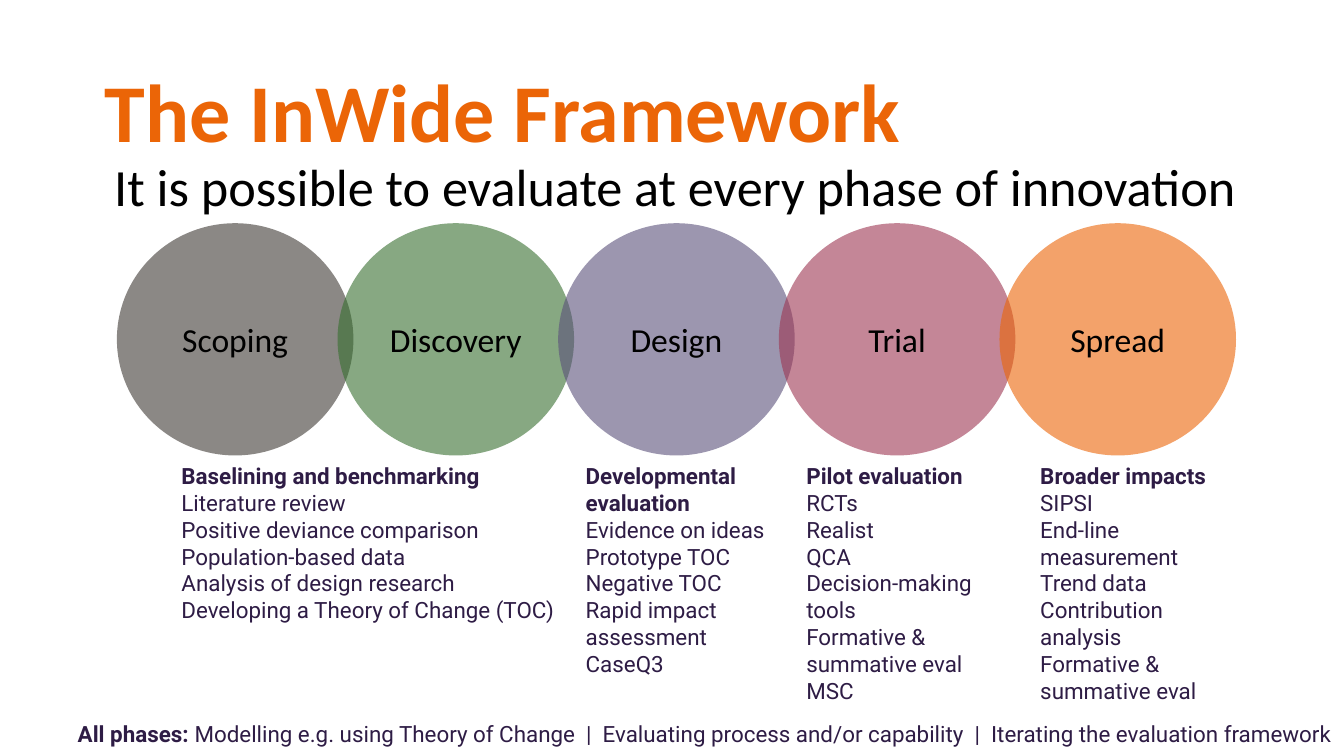
import pptx
import pptx.util
import pptx.dml.color
import pptx.enum.shapes
import pptx.enum.text
import pptx.oxml
import pptx.oxml.ns

Cm = pptx.util.Cm
ALIGN = pptx.enum.text.PP_ALIGN
ANCHOR = pptx.enum.text.MSO_ANCHOR

# Content
TITLE = "The InWide Framework"
SUBTITLE = "It is possible to evaluate at every phase of innovation"
PHASES = [
    ("Scoping", "3E3934"),
    ("Discovery", "376F2F"),
    ("Design", "5B517B"),
    ("Trial", "9D3652"),
    ("Spread", "EB6507"),
]
# left and width in cm, heading, methods
METHODS = [
    (3.18, 7.62, "Baselining and benchmarking",
     ["Literature review", "Positive deviance comparison", "Population-based data",
      "Analysis of design research", "Developing a Theory of Change (TOC)"]),
    (10.82, 3.91, "Developmental evaluation",
     ["Evidence on ideas", "Prototype TOC", "Negative TOC",
      "Rapid impact assessment", "CaseQ3"]),
    (14.99, 3.86, "Pilot evaluation",
     ["RCTs", "Realist", "QCA", "Decision-making tools",
      "Formative & summative eval", "MSC"]),
    (19.41, 4.39, "Broader impacts",
     ["SIPSI", "End-line measurement", "Trend data", "Contribution analysis",
      "Formative & summative eval"]),
]
FOOTER_LABEL = "All phases: "
FOOTER = ("Modelling e.g. using Theory of Change  |  "
          "Evaluating process and/or capability  |  "
          "Iterating the evaluation framework")

# Formats
TITLE_FORMAT = {"name": "Calibri", "size": 44, "bold": True, "color": "EB6507"}
SUBTITLE_FORMAT = {"name": "Calibri", "size": 28, "bold": False, "color": "000000"}
PHASE_FORMAT = {**SUBTITLE_FORMAT, "size": 18}
BODY_FORMAT = {"name": "Roboto", "size": 12, "bold": False, "color": "2E1C45"}
HEADING_FORMAT = {**BODY_FORMAT, "bold": True}

# Circle row, in cm
CIRCLE_LEFT, CIRCLE_TOP, CIRCLE_STEP = 2.21, 4.22, 4.17
CIRCLE_WIDTH, CIRCLE_HEIGHT = 4.47, 4.39
CIRCLE_OPACITY = 60
METHODS_TOP, METHODS_HEIGHT = 8.61, 3.35


def set_color(target, value):
    target.rgb = pptx.dml.color.RGBColor.from_string(value)


def write(frame, lines, align=ALIGN.LEFT):
    """Each line is a list of (text, format) spans."""
    for index, spans in enumerate(lines):
        para = frame.paragraphs[0] if index == 0 else frame.add_paragraph()
        para.alignment = align
        for text, style in spans:
            span = para.add_run()
            span.text = text
            for key, value in style.items():
                if key == "color":
                    set_color(span.font.color, value)
                else:
                    setattr(span.font, key, pptx.util.Pt(value) if key == "size" else value)


def add_text(page, left, top, width, height, lines):
    box = page.shapes.add_textbox(Cm(left), Cm(top), Cm(width), Cm(height))
    box.text_frame.word_wrap = True
    write(box.text_frame, lines)


def add_circle(page, left, label, color):
    circle = page.shapes.add_shape(
        pptx.enum.shapes.MSO_SHAPE.OVAL,
        Cm(left), Cm(CIRCLE_TOP), Cm(CIRCLE_WIDTH), Cm(CIRCLE_HEIGHT))
    circle.shadow.inherit = False
    circle.line.fill.background()
    circle.fill.solid()
    set_color(circle.fill.fore_color, color)
    color_node = circle.fill._xPr.find(".//" + pptx.oxml.ns.qn("a:srgbClr"))
    alpha = pptx.oxml.parse_xml(
        f'<a:alpha {pptx.oxml.ns.nsdecls("a")} val="{CIRCLE_OPACITY * 1000}"/>')
    color_node.append(alpha)
    frame = circle.text_frame
    frame.word_wrap = False
    frame.vertical_anchor = ANCHOR.MIDDLE
    write(frame, [[(label, PHASE_FORMAT)]], ALIGN.CENTER)


def main():
    deck = pptx.Presentation()
    deck.slide_width, deck.slide_height = Cm(25.4), Cm(14.29)
    page = deck.slides.add_slide(deck.slide_layouts[6])

    # Overlapping phase circles
    for index, (label, color) in enumerate(PHASES):
        add_circle(page, CIRCLE_LEFT + index * CIRCLE_STEP, label, color)

    # Title and subtitle
    add_text(page, 1.73, 1.02, 22.78, 2.9, [[(TITLE, TITLE_FORMAT)]])
    add_text(page, 1.91, 2.8, 22.81, 6.15, [[(SUBTITLE, SUBTITLE_FORMAT)]])

    # Methods under the phases
    for left, width, heading, methods in METHODS:
        lines = [[(heading, HEADING_FORMAT)]]
        lines += [[(method, BODY_FORMAT)] for method in methods]
        add_text(page, left, METHODS_TOP, width, METHODS_HEIGHT, lines)

    # Line that applies to all phases
    add_text(page, 1.22, 13.49, 24.28, 0.81,
             [[(FOOTER_LABEL, HEADING_FORMAT), (FOOTER, BODY_FORMAT)]])

    deck.save("out.pptx")


if __name__ == "__main__":
    main()
